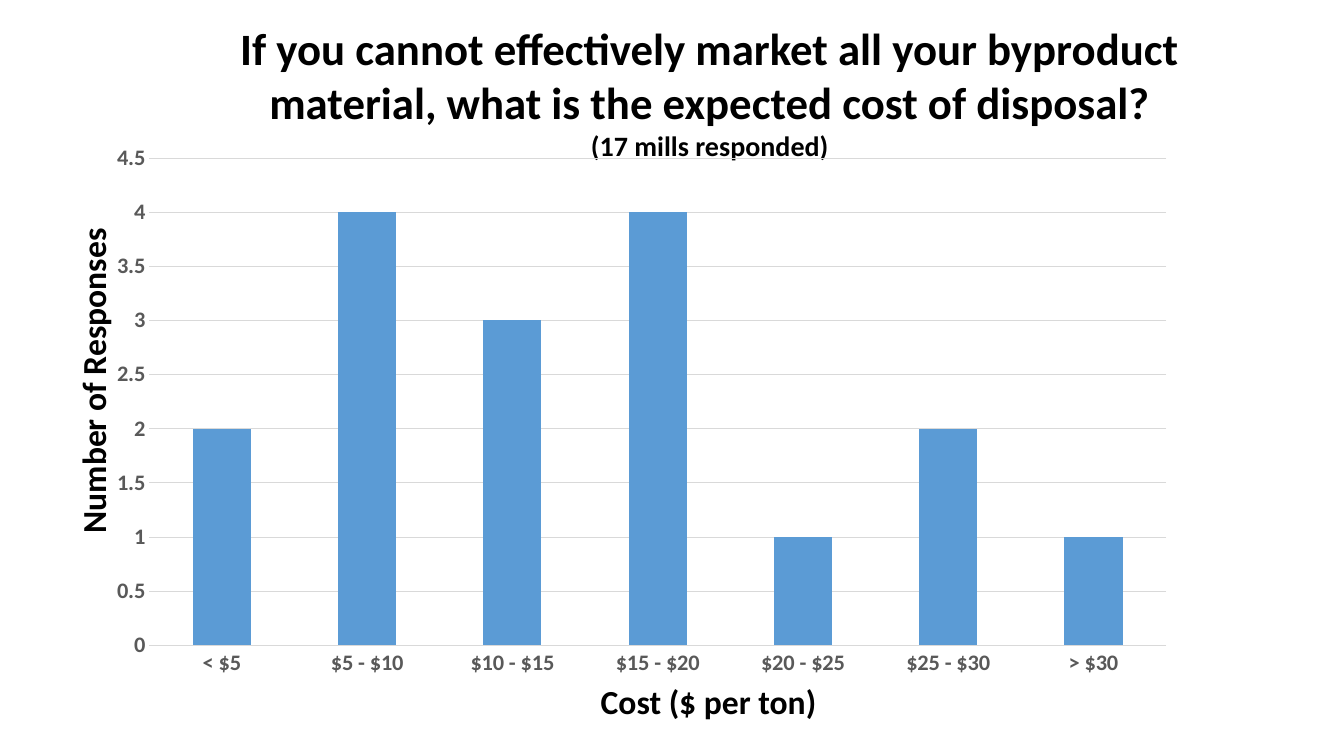
"""Build a slide with a column chart of expected byproduct disposal costs."""
from lxml.etree import SubElement
from pptx import Presentation
from pptx.chart.data import CategoryChartData
from pptx.dml.color import RGBColor
from pptx.enum.chart import XL_CHART_TYPE as ChartType, XL_TICK_MARK as TickMark
from pptx.enum.text import PP_ALIGN as Align
from pptx.oxml.ns import qn
from pptx.util import Inches, Pt

THEME = {
    "font": "Calibri",
    "text": RGBColor.from_string("000000"),
    "axis": RGBColor.from_string("595959"),
    "grid": RGBColor.from_string("D9D9D9"),
    "column": RGBColor.from_string("5B9BD5"),
    "title_size": Pt(32),
    "subtitle_size": Pt(20),
    "label_size": Pt(24),
    "tick_size": Pt(16),
}


def style_font(font, size, color):
    font.name = THEME["font"]
    font.size = size
    font.bold = True
    font.color.rgb = color


def add_label(slide, box, lines, alignment=Align.LEFT, wrap=True):
    shape = slide.shapes.add_textbox(*map(Inches, box))
    shape.text_frame.word_wrap = wrap
    shape.text_frame.text = "\n".join(text for text, size in lines)
    for paragraph, (text, size) in zip(shape.text_frame.paragraphs, lines):
        paragraph.alignment = alignment
        style_font(paragraph.runs[0].font, size, THEME["text"])
    return shape


presentation = Presentation()
presentation.slide_width = Inches(13.33)
presentation.slide_height = Inches(7.5)
slide = presentation.slides.add_slide(presentation.slide_layouts[6])

question = "If you cannot effectively market all your byproduct material, what is the expected cost of disposal?"
add_label(
    slide,
    (1.58, 0.16, 10.92, 2.05),
    [(question, THEME["title_size"]), ("(17 mills responded)", THEME["subtitle_size"])],
    Align.CENTER,
)
add_label(slide, (5.86, 6.71, 2.36, 0.5), [("Cost ($ per ton)", THEME["label_size"])], wrap=False)
responses_label = add_label(slide, (-0.87, 3.35, 3.58, 0.5), [("Number of Responses", THEME["label_size"])])
responses_label.rotation = 270

responses = {
    "< $5": 2,
    "$5 - $10": 4,
    "$10 - $15": 3,
    "$15 - $20": 4,
    "$20 - $25": 1,
    "$25 - $30": 2,
    "> $30": 1,
}
chart_data = CategoryChartData()
chart_data.categories = list(responses)
chart_data.add_series("Series 1", list(responses.values()))
chart_box = map(Inches, (1.07, 1.34, 10.81, 5.37))
chart = slide.shapes.add_chart(ChartType.COLUMN_CLUSTERED, *chart_box, chart_data).chart
chart.has_legend = False
chart.has_title = False
chart.font.name = THEME["font"]

plot = chart.plots[0]
plot.gap_width = 150
plot.vary_by_categories = False
column_fill = plot.series[0].format.fill
column_fill.solid()
column_fill.fore_color.rgb = THEME["column"]

for axis in (chart.category_axis, chart.value_axis):
    axis.major_tick_mark = TickMark.NONE
    axis.minor_tick_mark = TickMark.NONE
    axis.format.line.fill.background()
    style_font(axis.tick_labels.font, THEME["tick_size"], THEME["axis"])

value_axis = chart.value_axis
value_axis.minimum_scale = 0
value_axis.maximum_scale = 4.5
value_axis.major_unit = 0.5
value_axis.tick_labels.number_format = "General"
value_axis.tick_labels.number_format_is_linked = False
value_axis.has_major_gridlines = True
grid_line = value_axis.major_gridlines.format.line
grid_line.color.rgb = THEME["grid"]
grid_line.width = Pt(0.75)

plot_area = chart.element.find(f".//{qn('c:plotArea')}")
layout = plot_area.find(qn("c:layout"))
if layout is None:
    layout = SubElement(plot_area, qn("c:layout"))
    plot_area.insert(0, layout)
manual_layout = SubElement(layout, qn("c:manualLayout"))
layout_values = {
    "layoutTarget": "inner",
    "xMode": "edge",
    "yMode": "edge",
    "x": "0.038",
    "y": "0.043",
    "w": "0.933",
    "h": "0.908",
}
for name, value in layout_values.items():
    SubElement(manual_layout, qn(f"c:{name}")).set("val", value)

presentation.save("out.pptx")
